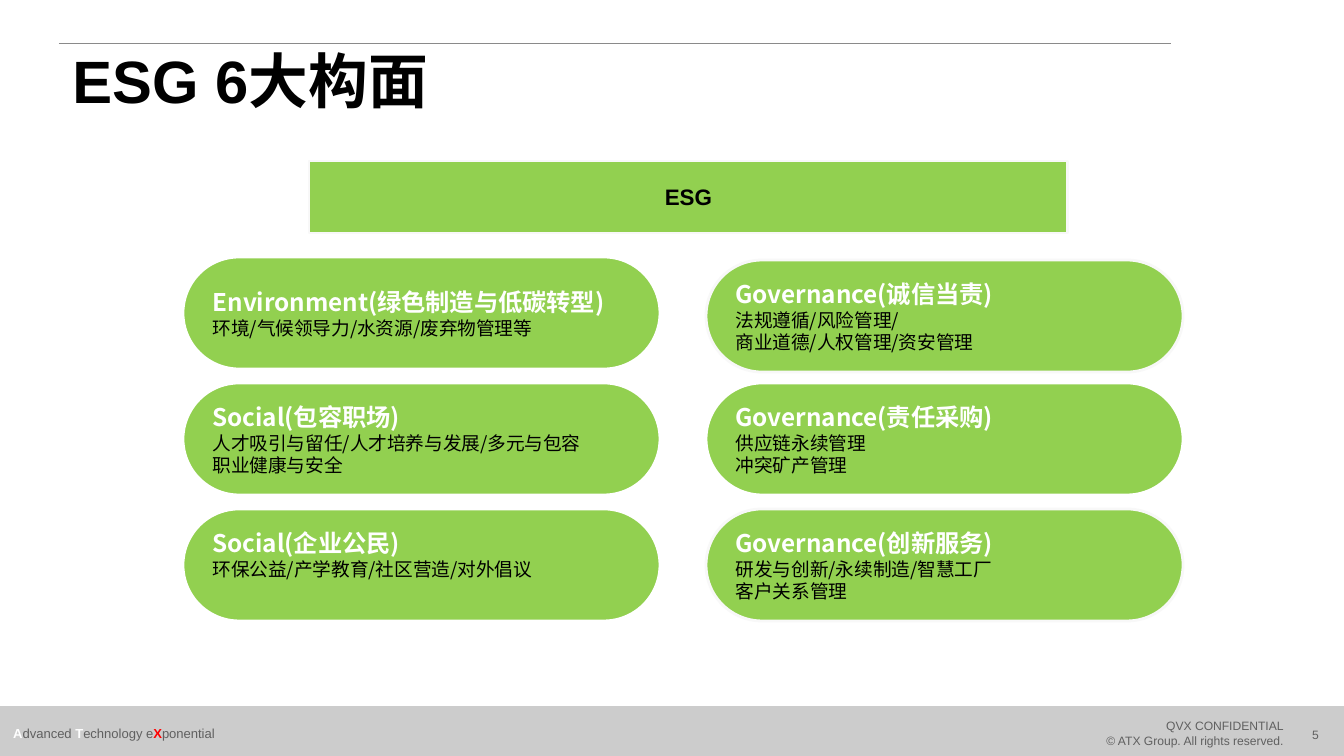
from dataclasses import dataclass

from lxml import etree
from pptx import Presentation
from pptx.dml.color import RGBColor
from pptx.enum.shapes import MSO_CONNECTOR, MSO_SHAPE
from pptx.enum.text import MSO_ANCHOR, MSO_AUTO_SIZE, PP_ALIGN
from pptx.oxml.ns import qn
from pptx.util import Pt

LEFT, CENTER, RIGHT = PP_ALIGN.LEFT, PP_ALIGN.CENTER, PP_ALIGN.RIGHT
MIDDLE, NO_AUTOFIT = MSO_ANCHOR.MIDDLE, MSO_AUTO_SIZE.NONE
RECTANGLE, PILL = MSO_SHAPE.RECTANGLE, MSO_SHAPE.ROUNDED_RECTANGLE
STRAIGHT = MSO_CONNECTOR.STRAIGHT

GREEN = RGBColor(0x92, 0xD0, 0x50)
WHITE = RGBColor(0xFF, 0xFF, 0xFF)
OFF_WHITE = RGBColor(0xF8, 0xF8, 0xF8)
BLACK = RGBColor(0, 0, 0)
RED = RGBColor(0xFF, 0, 0)
FOOTER_GRAY = RGBColor(0xCC, 0xCC, 0xCC)
TEXT_GRAY = RGBColor(0x60, 0x60, 0x60)
RULE_GRAY = RGBColor(0x8A, 0x8A, 0x8A)

LATIN, CJK = "Arial", "Noto Sans CJK SC"
EMU_PER_PX = 914400 / 134.4

# Grid of the pills, in px
COLUMN_LEFT, COLUMN_PITCH = 183, 523
ROW_TOP, ROW_PITCH = 257, 126
PILL_WIDTH, PILL_HEIGHT = 477, 112
INSET = 6
DETAIL_LINE = 22


@dataclass(frozen=True)
class Box:
    left: int
    top: int
    width: int
    height: int


@dataclass(frozen=True)
class Facet:
    column: int
    row: int
    heading: str
    details: tuple[str, ...]
    outline: RGBColor = WHITE
    shift: int = 0
    free_lines: int = 0


FACETS = (
    Facet(0, 0, "Environment(绿色制造与低碳转型)", ("环境/气候领导力/水资源/废弃物管理等",)),
    Facet(0, 1, "Social(包容职场)",
          ("人才吸引与留任/人才培养与发展/多元与包容", "职业健康与安全")),
    Facet(0, 2, "Social(企业公民)", ("环保公益/产学教育/社区营造/对外倡议",), free_lines=1),
    Facet(1, 0, "Governance(诚信当责)",
          ("法规遵循/风险管理/", "商业道德/人权管理/资安管理"), OFF_WHITE, shift=3),
    Facet(1, 1, "Governance(责任采购)", ("供应链永续管理", "冲突矿产管理")),
    Facet(1, 2, "Governance(创新服务)",
          ("研发与创新/永续制造/智慧工厂", "客户关系管理"), OFF_WHITE),
)


def px(length: int) -> int:
    return round(length * EMU_PER_PX)


def bounds(box: Box) -> tuple[int, int, int, int]:
    return px(box.left), px(box.top), px(box.width), px(box.height)


def add_run(paragraph, text: str, *, size: float, color: RGBColor,
            bold: bool = False, font: str = LATIN) -> None:
    run = paragraph.add_run()
    run.text = text
    run.font.size = Pt(size)
    run.font.bold = bold
    run.font.color.rgb = color
    run.font.name = font
    east_asian = etree.SubElement(run.font._element, qn("a:ea"))
    east_asian.set("typeface", CJK)


def start_paragraph(frame, align=LEFT, first: bool = True):
    frame.word_wrap = True
    frame.vertical_anchor = MIDDLE
    paragraph = frame.paragraphs[0] if first else frame.add_paragraph()
    paragraph.alignment = align
    return paragraph


def add_block(slide, kind, box: Box, fill: RGBColor, outline: RGBColor, weight: float):
    shape = slide.shapes.add_shape(kind, *bounds(box))
    shape.shadow.inherit = False
    shape.fill.solid()
    shape.fill.fore_color.rgb = fill
    shape.line.color.rgb = outline
    shape.line.width = Pt(weight)
    return shape


def add_text_box(slide, box: Box):
    return slide.shapes.add_textbox(*bounds(box)).text_frame


def add_facet(slide, facet: Facet) -> None:
    box = Box(COLUMN_LEFT + facet.column * COLUMN_PITCH,
              ROW_TOP + facet.row * ROW_PITCH + facet.shift, PILL_WIDTH, PILL_HEIGHT)
    shape = add_block(slide, PILL, box, GREEN, facet.outline, 1.5)
    shape.adjustments[0] = 0.5
    frame = shape.text_frame
    frame.margin_bottom = px(INSET + facet.free_lines * DETAIL_LINE)
    add_run(start_paragraph(frame), facet.heading, size=13, color=WHITE, bold=True, font=CJK)
    for detail in facet.details:
        add_run(start_paragraph(frame, first=False), detail, size=10, color=BLACK, font=CJK)


def add_footer(slide) -> None:
    add_block(slide, RECTANGLE, Box(0, 707, 1344, 48), FOOTER_GRAY, FOOTER_GRAY, 1)

    number = start_paragraph(add_text_box(slide, Box(1278, 715, 75, 39)), CENTER)
    add_run(number, "5", size=6.5, color=TEXT_GRAY)

    notice = add_text_box(slide, Box(1071, 712, 226, 42))
    for index, text in enumerate(("QVX CONFIDENTIAL", "© ATX Group. All rights reserved.")):
        add_run(start_paragraph(notice, RIGHT, first=index == 0), text,
                size=6.5, color=TEXT_GRAY)

    motto = start_paragraph(add_text_box(slide, Box(0, 712, 257, 42)))
    for initial, rest, color in (("A", "dvanced ", WHITE), ("T", "echnology e", WHITE),
                                 ("X", "ponential", RED)):
        add_run(motto, initial, size=7, color=color, bold=True)
        add_run(motto, rest, size=7, color=TEXT_GRAY)


def add_title(slide) -> None:
    rule = slide.shapes.add_connector(STRAIGHT, px(59), px(44), px(1171), px(44))
    rule.line.color.rgb = RULE_GRAY
    rule.line.width = Pt(0.5)
    etree.SubElement(rule._element.spPr, qn("a:effectLst"))

    title = slide.shapes.title
    title.left, title.top, title.width, title.height = bounds(Box(59, 47, 1219, 74))
    title.text_frame.auto_size = NO_AUTOFIT
    paragraph = start_paragraph(title.text_frame)
    paragraph.line_spacing = 0.9
    add_run(paragraph, "ESG 6大构面", size=32, color=BLACK, bold=True)


def main() -> None:
    presentation = Presentation()
    presentation.slide_width, presentation.slide_height = px(1344), px(756)
    slide = presentation.slides.add_slide(presentation.slide_layouts[5])

    add_footer(slide)
    add_title(slide)

    # Six facets under the common banner
    for facet in FACETS:
        add_facet(slide, facet)
    banner = add_block(slide, RECTANGLE, Box(309, 161, 759, 72), GREEN, OFF_WHITE, 1.5)
    add_run(start_paragraph(banner.text_frame, CENTER), "ESG", size=12, color=BLACK, bold=True)

    presentation.save("out.pptx")


if __name__ == "__main__":
    main()
